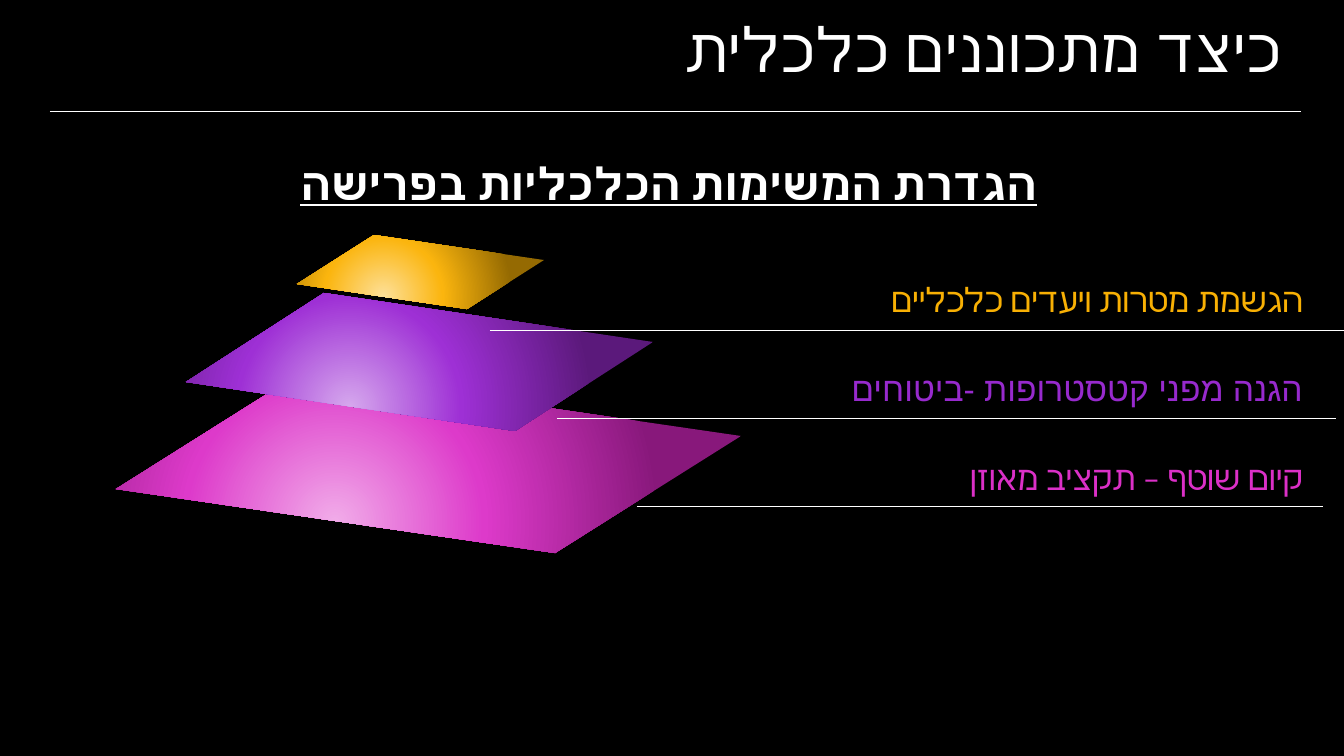
from lxml import etree
from pptx import Presentation
from pptx import util as u
from pptx.dml.color import RGBColor
from pptx.enum import shapes, text
from pptx.oxml import parse_xml
from pptx.oxml.ns import nsdecls, qn

PX = 914400 / 100.8
COLORS = {
    "background": "000000",
    "white": "FFFFFF",
    "goals": "F8B004",
    "protection": "972ACD",
    "living": "DB30C7",
}
# Layer corners: left, bottom, right, top; gradient from centre to rim
LAYERS = [
    ([(116, 489), (555, 553), (741, 436), (302, 372)], ["F1ACE9", "DD3ACA", "88187B"]),
    ([(186, 382), (515, 431), (653, 342), (324, 293)], ["D6A8ED", "9E30D5", "5B197B"]),
    ([(297, 284), (467, 309), (544, 260), (374, 235)], ["FDE099", "FBB50E", "956A02"]),
]
# Label text, font, colour, box top, line start, line end, line height
LABELS = [
    ("הגשמת מטרות ויעדים כלכליים", "Calibri", "goals", 274, 490, 1347, 330),
    ("הגנה מפני קטסטרופות -ביטוחים", "Arial", "protection", 363, 557, 1336, 418),
    ("קיום שוטף – תקציב מאוזן", "Calibri", "living", 452, 637, 1323, 506),
]


def px(value):
    return u.Emu(round(value * PX))


def place(shape, box):
    shape.left, shape.top, shape.width, shape.height = map(px, box)


def write(shape, words, font, size, color="white", align=text.PP_ALIGN.RIGHT,
          anchor=text.MSO_ANCHOR.TOP, fit=text.MSO_AUTO_SIZE.SHAPE_TO_FIT_TEXT,
          rtl=False, line_spacing=None, bold=False, underline=False, tracking=None):
    frame = shape.text_frame
    frame.word_wrap = True
    frame.auto_size = fit
    frame.vertical_anchor = anchor
    paragraph = frame.paragraphs[0]
    paragraph.alignment = align
    paragraph.line_spacing = line_spacing
    if rtl:
        paragraph._p.get_or_add_pPr().set("rtl", "1")
    run = paragraph.add_run()
    run.text = words
    run.font.size = u.Pt(size)
    run.font.bold = bold
    run.font.underline = underline
    run.font.color.rgb = RGBColor.from_string(COLORS[color])
    run.font.name = font
    properties = run._r.get_or_add_rPr()
    # Hebrew takes the complex-script font
    etree.SubElement(properties, qn("a:cs")).set("typeface", font)
    if tracking:
        properties.set("spc", str(tracking * 100))


def add_rule(slide, start, end, y):
    rule = slide.shapes.add_connector(
        shapes.MSO_CONNECTOR.STRAIGHT, px(start), px(y), px(end), px(y))
    rule.line.color.rgb = RGBColor.from_string(COLORS["white"])
    rule.line.width = u.Pt(0.5)
    etree.SubElement(rule._element.spPr, qn("a:effectLst"))


def add_header(slide, box):
    left, top, width, height = box
    title = slide.shapes.title
    place(title, (left, top, width, height))
    write(title, "כיצד מתכוננים כלכלית", "Karla", 44, rtl=True, line_spacing=0.9,
          tracking=1, anchor=text.MSO_ANCHOR.MIDDLE, fit=text.MSO_AUTO_SIZE.NONE)
    add_rule(slide, left + 50, left + width + 9, top + 100)


def add_layer(slide, corners, stops):
    builder = slide.shapes.build_freeform(*corners[0], scale=PX)
    builder.add_line_segments(corners[1:], close=True)
    layer = builder.convert_to_shape()
    layer.shadow.inherit = False
    layer.line.fill.background()
    layer.fill.background()
    stop_xml = "".join(
        f'<a:gs pos="{position}000"><a:srgbClr val="{color}"/></a:gs>'
        for position, color in zip((0, 46, 100), stops))
    # The glow sits on the middle of the lower left edge
    gradient = parse_xml(
        f'<a:gradFill {nsdecls("a")} rotWithShape="1"><a:gsLst>{stop_xml}</a:gsLst>'
        '<a:path path="circle"><a:fillToRect l="35000" t="83000" r="65000" b="17000"/>'
        '</a:path></a:gradFill>')
    properties = layer._element.spPr
    properties.replace(properties.find(qn("a:noFill")), gradient)


def add_labels(slide, left, width, height):
    for words, font, color, top, start, end, line_y in LABELS:
        add_rule(slide, start, end, line_y)
        label = slide.shapes.add_textbox(*map(px, (left, top, width, height)))
        write(label, words, font, 24, color=color)


def add_subtitle(slide, box):
    subtitle = slide.shapes.add_textbox(*map(px, box))
    write(subtitle, "הגדרת המשימות הכלכליות בפרישה", "Cabin", 32, rtl=True,
          align=text.PP_ALIGN.CENTER, line_spacing=1.5, bold=True, underline=True)


def main():
    presentation = Presentation()
    presentation.slide_width, presentation.slide_height = px(1344), px(756)
    slide = presentation.slides.add_slide(presentation.slide_layouts[5])
    slide.background.fill.solid()
    slide.background.fill.fore_color.rgb = RGBColor.from_string(COLORS["background"])

    add_header(slide, (0, 11, 1292, 83))
    # Stacked layers, lowest first
    for corners, stops in LAYERS:
        add_layer(slide, corners, stops)
    add_labels(slide, 703, 610, 50)
    add_subtitle(slide, (37, 124, 1264, 83))
    presentation.save("out.pptx")


if __name__ == "__main__":
    main()
